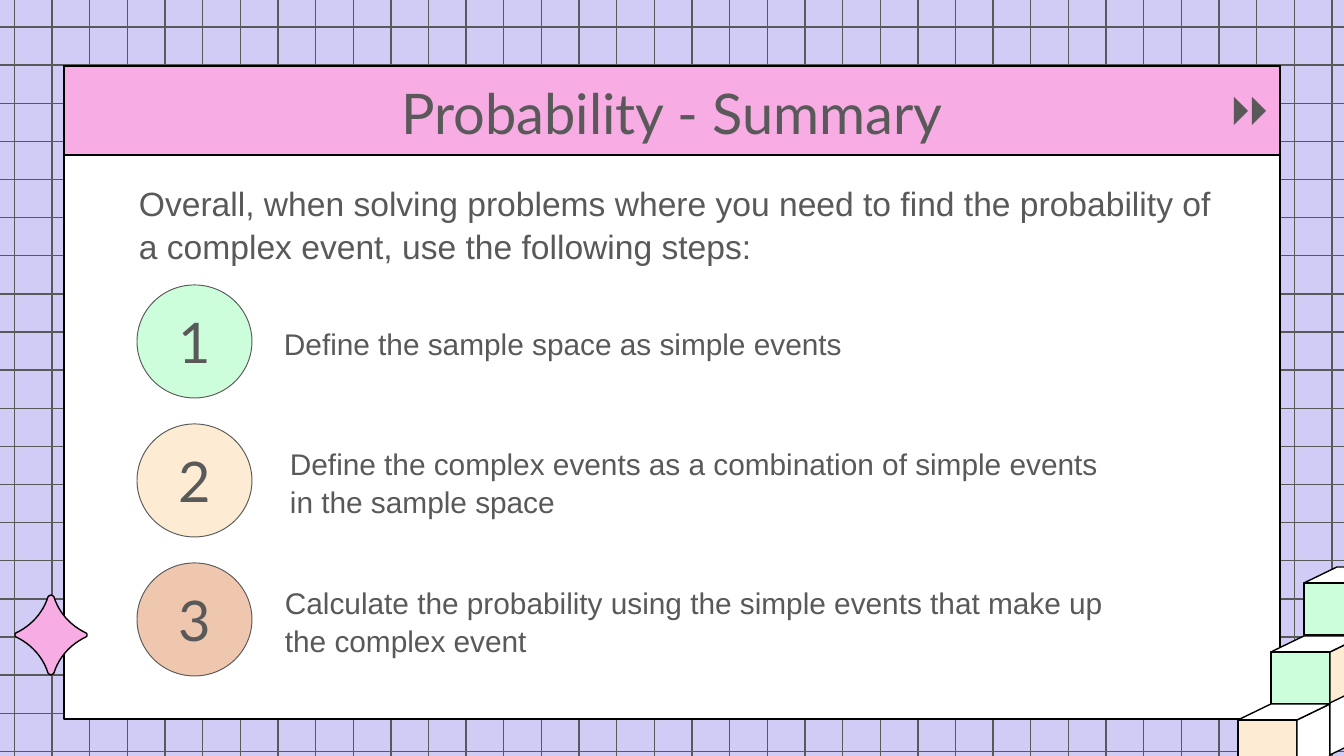
from pptx import Presentation
from pptx.dml.color import RGBColor
from pptx.enum.shapes import MSO_CONNECTOR as Connector, MSO_SHAPE as Shape
from pptx.enum.text import MSO_ANCHOR as Anchor, PP_ALIGN as Align
from pptx.oxml.ns import qn
from pptx.util import Pt
from lxml.etree import SubElement

WIDTH, HEIGHT = 1344, 756
SCALE = 9144000 / WIDTH

GREY, BLACK, WHITE = "595959", "000000", "FFFFFF"
LILAC, PINK = "D0CCF5", "F7ACE4"
GREEN, CREAM, PEACH = "CCFEDC", "FDECD3", "EEC7AE"

# Corners of each cube face, relative to the top left of its front
FACES = {
    "front": [(0, 0), (0, 52), (59, 52), (59, 0)],
    "side": [(92, -16), (59, 0), (59, 52), (92, 36)],
    "top": [(33, -16), (0, 0), (59, 0), (92, -16)],
}
CUBE_FACES = [
    ("front", 1304, 583, GREEN),
    ("top", 1304, 583, WHITE),
    ("front", 1271, 652, GREEN),
    ("side", 1271, 652, CREAM),
    ("top", 1271, 652, WHITE),
    ("front", 1238, 720, CREAM),
    ("side", 1238, 720, WHITE),
    ("side", 1271, 703, WHITE),
    ("top", 1238, 720, WHITE),
]

# Fill of the number, text, text box, text format
STEPS = [
    (GREEN, "Define the sample space as simple events",
     (251, 310, 890, 59), {"indent": 20, "inset": 13}),
    (CREAM, "Define the complex events as a combination of simple events in the sample space",
     (277, 438, 861, 86), {"anchor": Anchor.MIDDLE}),
    (PEACH, "Calculate the probability using the simple events that make up the complex event",
     (272, 577, 870, 86), {"anchor": Anchor.MIDDLE}),
]


def px(value):
    return round(value * SCALE)


def color(value):
    return RGBColor.from_string(value)


def paint(shape, fill, line=None, weight=0.75):
    shape.shadow.inherit = False
    shape.fill.solid()
    shape.fill.fore_color.rgb = color(fill)
    if line:
        shape.line.color.rgb = color(line)
        shape.line.width = Pt(weight)
    else:
        shape.line.fill.background()
    return shape


def add_preset(page, kind, area, fill, line=None, weight=0.75):
    shape = page.shapes.add_shape(kind, *map(px, area))
    return paint(shape, fill, line, weight)


def add_outline(page, points, fill):
    corners = [(px(x), px(y)) for x, y in points]
    builder = page.shapes.build_freeform(*corners[0], scale=1)
    builder.add_line_segments(corners[1:], close=True)
    return paint(builder.convert_to_shape(), fill, BLACK)


def add_line(page, *ends):
    line = page.shapes.add_connector(Connector.STRAIGHT, *map(px, ends))
    line.line.color.rgb = color(GREY)
    line.line.width = Pt(0.75)
    SubElement(line._element.spPr, qn("a:effectLst"))


def write(shape, text, size=16, font="Arial", align=Align.LEFT,
          anchor=Anchor.TOP, inset=7, indent=0, spacing=1.0):
    """Put one paragraph into a shape; inset is its top and bottom margin."""
    frame = shape.text_frame
    frame.word_wrap = True
    frame.vertical_anchor = anchor
    frame.margin_left = frame.margin_right = px(13)
    frame.margin_top = frame.margin_bottom = px(inset)
    para = frame.paragraphs[0]
    para.alignment = align
    para.line_spacing = spacing
    if indent:
        para._p.get_or_add_pPr().set("marL", str(px(indent)))
    span = para.add_run()
    span.text = text
    span.font.size = Pt(size)
    span.font.name = font
    span.font.color.rgb = color(GREY)


def add_text(page, area, text, **style):
    box = page.shapes.add_textbox(*map(px, area))
    write(box, text, spacing=1.07, **style)


def add_grid(page):
    for row in range(20):
        y = 27 + row * 38.13
        add_line(page, 0, y, WIDTH, y)
    for column in range(36):
        x = 14.5 + column * 37.64
        add_line(page, x, 0, x, HEIGHT)


def add_cubes(page):
    for face, left, top, fill in CUBE_FACES:
        add_outline(page, [(left + x, top + y) for x, y in FACES[face]], fill)


def cubic(start, first, second, end, count=12):
    """Points along a Bezier curve."""
    points = []
    for step in range(count + 1):
        t = step / count
        weights = ((1 - t) ** 3, 3 * t * (1 - t) ** 2, 3 * t * t * (1 - t), t ** 3)
        points.append(tuple(
            sum(w * c for w, c in zip(weights, values))
            for values in zip(start, first, second, end)))
    return points


def add_sparkle(page, center_x, center_y):
    quarter = [(0, -40), (2, -39), *cubic((3, -38), (8, -22), (20, -9), (35, -2)),
               (36, -1), (36, 0)]
    right = quarter + [(x, -y) for x, y in reversed(quarter[:-1])]
    left = [(-x, y) for x, y in reversed(right[1:-1])]
    add_outline(page, [(center_x + x, center_y + y) for x, y in right + left], PINK)


def add_title(page):
    bar = add_preset(page, Shape.RECTANGLE, (64, 66, 1216, 89), PINK, BLACK)
    write(bar, "Probability - Summary", size=30, font="Lato",
          align=Align.CENTER, inset=13)
    for left in (1227, 1245):
        arrow = add_preset(page, Shape.ISOSCELES_TRIANGLE, (left, 104, 28, 14), GREY)
        arrow.rotation = 90


def add_steps(page):
    for index, (fill, text, area, style) in enumerate(STEPS):
        add_text(page, area, text, **style)
        circle = add_preset(page, Shape.OVAL, (137, 285 + index * 139, 115, 113),
                            fill, GREY, 0.5)
        write(circle, str(index + 1), size=30, font="Lato",
              align=Align.CENTER, anchor=Anchor.MIDDLE)


def main():
    deck = Presentation()
    deck.slide_width, deck.slide_height = px(WIDTH), px(HEIGHT)
    page = deck.slides.add_slide(deck.slide_layouts[6])
    page.background.fill.solid()
    page.background.fill.fore_color.rgb = color(LILAC)

    add_grid(page)
    add_preset(page, Shape.RECTANGLE, (64, 66, 1216, 653), WHITE, BLACK)
    add_cubes(page)
    add_sparkle(page, 51, 635)
    add_title(page)
    add_text(page, (106, 167, 1133, 110),
             "Overall, when solving problems where you need to find the probability of "
             "a complex event, use the following steps:",
             size=18, indent=20, inset=13)
    add_steps(page)
    deck.save("out.pptx")


if __name__ == "__main__":
    main()
